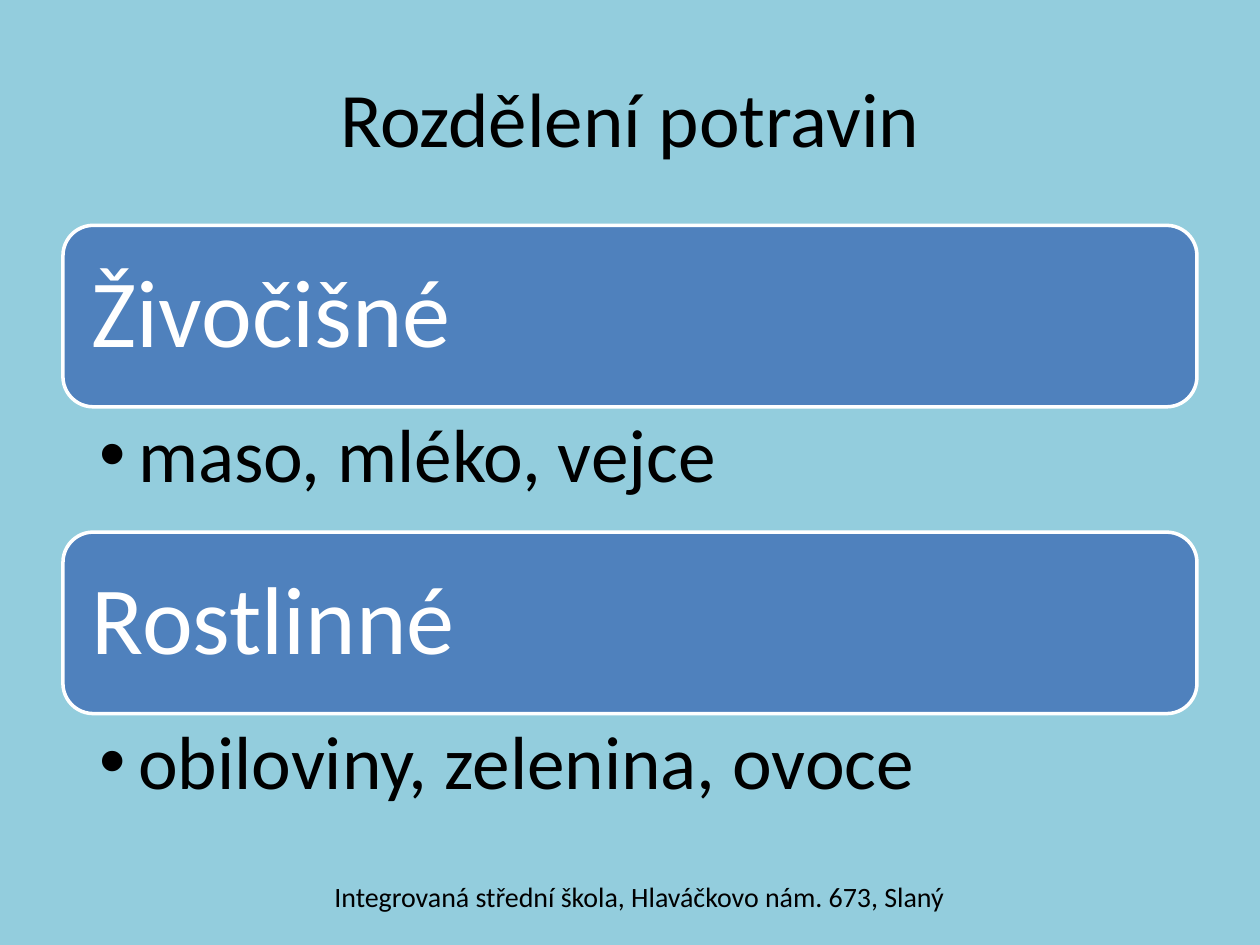
"""Build the slide that sorts foods into animal and plant groups."""
import pptx
import pptx.dml.color
import pptx.enum.shapes
import pptx.enum.text
import pptx.oxml.ns
import pptx.util
from lxml import etree

Pt = pptx.util.Pt
RGBColor = pptx.dml.color.RGBColor
ALIGN = pptx.enum.text.PP_ALIGN
ANCHOR = pptx.enum.text.MSO_ANCHOR

SKY = RGBColor(0x93, 0xCD, 0xDD)
BLUE = RGBColor(0x4F, 0x81, 0xBD)
WHITE = RGBColor(0xFF, 0xFF, 0xFF)
BLACK = RGBColor(0, 0, 0)

TITLE = "Rozdělení potravin"
GROUPS = [
    ("Živočišné", "maso, mléko, vejce"),
    ("Rostlinné", "obiloviny, zelenina, ovoce"),
]
FOOTER = "Integrovaná střední škola, Hlaváčkovo nám. 673, Slaný"

LEFT, WIDTH = 36, 648
TOP, STEP = 128.8, 175.3
BAR, LIST = 103.7, 71.6
INDENT = 22.3

HEAD = {"size": 44, "align": ALIGN.CENTER}
NAME = {"size": 55, "color": WHITE, "spacing": 0.9, "pad": (11.5, 16.5, 11.5, 16.5)}
ITEM = {"size": 43, "spacing": 0.9, "anchor": ANCHOR.TOP, "pad": (20.6, 6, 30.9, 6)}
FOOT = {"size": 16, "align": ALIGN.CENTER, "anchor": ANCHOR.TOP, "pad": (7.2, 0, 7.2, 0)}


def place(shape, left, top, width, height):
    box = {"left": left, "top": top, "width": width, "height": height}
    for key, value in box.items():
        setattr(shape, key, Pt(value))


def write(shape, text, style):
    frame = shape.text_frame
    frame.text = text
    line = frame.paragraphs[0]
    pad = style.get("pad", (7.2, 3.6, 7.2, 3.6))
    sides = ("margin_left", "margin_top", "margin_right", "margin_bottom")
    formats = [
        (frame, {
            "word_wrap": True,
            "auto_size": pptx.enum.text.MSO_AUTO_SIZE.NONE,
            "vertical_anchor": style.get("anchor", ANCHOR.MIDDLE),
            **{side: Pt(gap) for side, gap in zip(sides, pad)},
        }),
        (line, {
            "alignment": style.get("align", ALIGN.LEFT),
            "line_spacing": style.get("spacing", 1.0),
            "space_before": Pt(0),
        }),
        (line.runs[0].font, {"name": "Calibri", "size": Pt(style["size"])}),
    ]
    for target, values in formats:
        for key, value in values.items():
            setattr(target, key, value)
    line.runs[0].font.color.rgb = style.get("color", BLACK)
    return line


def bullet(line):
    props = line._p.get_or_add_pPr()
    props.set("marL", str(Pt(INDENT)))
    props.set("indent", str(-Pt(INDENT)))
    mark = etree.SubElement(props, pptx.oxml.ns.qn("a:buChar"))
    mark.set("char", "•")


def main():
    deck = pptx.Presentation()
    deck.slide_width, deck.slide_height = Pt(720), Pt(540)
    slide = deck.slides.add_slide(deck.slide_layouts.get_by_name("Two Content"))
    slide.background.fill.solid()
    slide.background.fill.fore_color.rgb = SKY

    title, *lists = slide.placeholders
    place(title, LEFT, 21.6, WIDTH, 90)
    write(title, TITLE, HEAD)

    for row, ((name, foods), body) in enumerate(zip(GROUPS, lists)):
        top = TOP + row * STEP
        bar = slide.shapes.add_shape(
            pptx.enum.shapes.MSO_SHAPE.ROUNDED_RECTANGLE,
            Pt(LEFT), Pt(top), Pt(WIDTH), Pt(BAR))
        bar.shadow.inherit = False
        bar.fill.solid()
        bar.fill.fore_color.rgb = BLUE
        bar.line.color.rgb = WHITE
        bar.line.width = Pt(2)
        write(bar, name, NAME)
        place(body, LEFT, top + BAR, WIDTH, LIST)
        bullet(write(body, foods, ITEM))

    foot = slide.shapes.add_textbox(Pt(161.3), Pt(502.5), Pt(408.2), Pt(37.5))
    write(foot, FOOTER, FOOT)
    deck.save("out.pptx")


if __name__ == "__main__":
    main()
